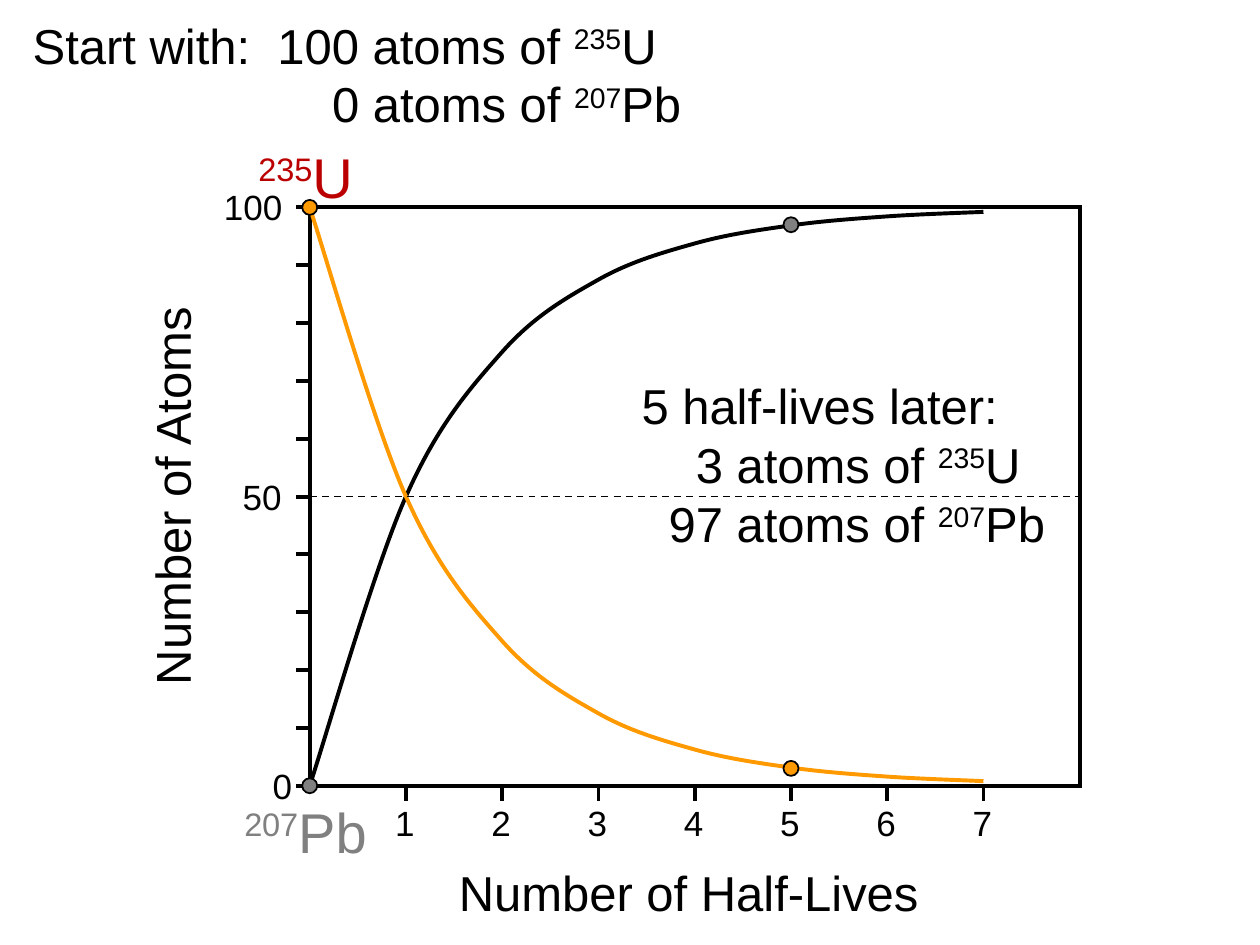
import pptx
import pptx.dml.color
import pptx.enum.dml
import pptx.enum.shapes
import pptx.enum.text
import pptx.oxml.ns
import pptx.util
from lxml import etree

Pt = pptx.util.Pt
ALIGN = pptx.enum.text.PP_ALIGN
SHAPE = pptx.enum.shapes.MSO_SHAPE
tag = pptx.oxml.ns.qn

COLORS = {
    "black": "000000",
    "uranium": "FF9900",
    "uranium_label": "BB0000",
    "lead": "808080",
}

# Plot area, in points
LEFT, TOP, WIDTH, HEIGHT = 177, 118.5, 440, 330.5
RIGHT, BOTTOM = LEFT + WIDTH, TOP + HEIGHT
HALF_LIFE = 55
HALF_LIVES = 7
TICK = 8


def rgb(name):
    return pptx.dml.color.RGBColor.from_string(COLORS[name])


def style_line(shape, color, width):
    shape.line.color.rgb = rgb(color)
    shape.line.width = Pt(width)


def atom_position(half_lives, atoms):
    return LEFT + half_lives * HALF_LIFE, BOTTOM - atoms * HEIGHT / 100


def fill_text(shape, lines, size, color="black", align=ALIGN.LEFT):
    """Write lines; each is a list of runs, and a run that starts with ^ is raised."""
    frame = shape.text_frame
    frame.word_wrap = False
    frame.auto_size = pptx.enum.text.MSO_AUTO_SIZE.NONE
    frame.vertical_anchor = pptx.enum.text.MSO_ANCHOR.TOP
    for index, runs in enumerate(lines):
        paragraph = frame.paragraphs[0] if index == 0 else frame.add_paragraph()
        paragraph.alignment = align
        paragraph.font.name = "Arial"
        paragraph.font.size = Pt(size)
        paragraph.font.color.rgb = rgb(color)
        for text in runs:
            run = paragraph.add_run()
            run.text = text.lstrip("^")
            if text.startswith("^"):
                run.font._element.set("baseline", "30000")
    return frame.paragraphs


def add_text(slide, box, lines, size, color="black", align=ALIGN.LEFT, rotation=0):
    shape = slide.shapes.add_textbox(*map(Pt, box))
    shape.rotation = rotation
    return fill_text(shape, lines, size, color, align)


def indent(paragraph, points):
    paragraph._p.get_or_add_pPr().set("marL", str(Pt(points)))


def add_line(slide, plot, start, end, width=2.25):
    line = slide.shapes.add_connector(
        pptx.enum.shapes.MSO_CONNECTOR.STRAIGHT, *map(Pt, (*start, *end)))
    style_line(line, "black", width)
    etree.SubElement(line._element.spPr, tag("a:effectLst"))
    # Join ends that meet the middle of a side of the plot
    middles = [(LEFT + WIDTH / 2, TOP), (LEFT, TOP + HEIGHT / 2),
               (LEFT + WIDTH / 2, BOTTOM), (RIGHT, TOP + HEIGHT / 2)]
    if start in middles:
        line.begin_connect(plot, middles.index(start))
    if end in middles:
        line.end_connect(plot, middles.index(end))
    return line


def bend(curve, knots):
    """Turn the straight segments into smooth ones, with handles along the chords."""
    left, top = knots[0][0], min(y for _, y in knots)
    padded = [knots[0], *knots, knots[-1]]
    segments = curve._element.findall(".//" + tag("a:lnTo"))
    for segment, a, b, c, d in zip(segments, padded, padded[1:], padded[2:], padded[3:]):
        first = [q + (r - p) / 6 for p, q, r in zip(a, b, c)]
        second = [r - (s - q) / 6 for q, r, s in zip(b, c, d)]
        cubic = etree.Element(tag("a:cubicBezTo"))
        for x, y in (first, second, c):
            etree.SubElement(cubic, tag("a:pt"),
                             x=str(Pt(x - left)), y=str(Pt(y - top)))
        segment.getparent().replace(segment, cubic)


def add_curve(slide, atoms, color):
    knots = [atom_position(n, atoms(n)) for n in range(HALF_LIVES + 1)]
    points = [(Pt(x), Pt(y)) for x, y in knots]
    builder = slide.shapes.build_freeform(*points[0])
    builder.add_line_segments(points[1:], close=False)
    curve = builder.convert_to_shape()
    bend(curve, knots)
    curve.fill.background()
    curve.shadow.inherit = False
    style_line(curve, color, 2.25)


def add_marker(slide, half_lives, atoms, color, diameter=8.6):
    x, y = atom_position(half_lives, atoms)
    marker = slide.shapes.add_shape(
        SHAPE.OVAL, Pt(x - diameter / 2), Pt(y - diameter / 2),
        Pt(diameter), Pt(diameter))
    marker.fill.solid()
    marker.fill.fore_color.rgb = rgb(color)
    marker.shadow.inherit = False
    style_line(marker, "black", 1)


def add_plot(slide):
    plot = slide.shapes.add_shape(
        SHAPE.RECTANGLE, Pt(LEFT), Pt(TOP), Pt(WIDTH), Pt(HEIGHT))
    plot.fill.background()
    plot.shadow.inherit = False
    style_line(plot, "black", 2.25)
    # Square corners
    outline = plot._element.spPr.find(tag("a:ln"))
    etree.SubElement(outline, tag("a:miter"), lim="800000")
    return plot


def add_axes(slide, plot):
    for n in range(1, HALF_LIVES + 1):
        x, y = atom_position(n, 0)
        add_line(slide, plot, (x, y), (x, y + TICK + 1))
        add_text(slide, (x - 14, 454.5, 26, 31), [[str(n)]], 20, align=ALIGN.RIGHT)
    for atoms in range(0, 101, 10):
        x, y = atom_position(0, atoms)
        add_line(slide, plot, (x, y), (x - TICK, y))
    for atoms, right, width in ((100, 168.5, 47.5), (50, 168, 37), (0, 174, 26)):
        y = atom_position(0, atoms)[1]
        add_text(slide, (right - width, y - 15.75, width, 31), [[str(atoms)]], 20,
                 align=ALIGN.RIGHT)
    middle = TOP + HEIGHT / 2
    half = add_line(slide, plot, (LEFT, middle), (RIGHT, middle), 1)
    half.line.dash_style = pptx.enum.dml.MSO_LINE.DASH
    add_text(slide, (252, 489.5, 283, 41), [["Number of Half-Lives"]], 28,
             align=ALIGN.CENTER)
    add_text(slide, (-21, 263, 238, 41), [["Number of Atoms"]], 28,
             align=ALIGN.CENTER, rotation=270)


def main():
    presentation = pptx.Presentation()
    presentation.slide_width, presentation.slide_height = Pt(720), Pt(540)
    slide = presentation.slides.add_slide(presentation.slide_layouts[5])

    # Starting amounts
    title = slide.shapes.title
    title.left, title.top, title.width, title.height = map(Pt, (11.5, 5, 396, 75))
    start_lines = fill_text(title, [
        ["Start with:  100 atoms of ", "^235", "U"],
        ["0 atoms of ", "^207", "Pb"]], 28)
    indent(start_lines[1], 171)

    # Decay and growth curves with their axes
    plot = add_plot(slide)
    add_curve(slide, lambda n: 100 - 100 * 0.5 ** n, "black")
    add_curve(slide, lambda n: 100 * 0.5 ** n, "uranium")
    add_axes(slide, plot)

    # Curve names
    add_text(slide, (140.5, 78, 74, 46), [["^235", "U"]], 32, "uranium_label")
    add_text(slide, (132.5, 452, 90, 46), [["^207", "Pb"]], 32, "lead")

    # Amounts at the start and after five half-lives
    for half_lives, uranium in ((0, 100), (5, 3)):
        add_marker(slide, half_lives, uranium, "uranium")
        add_marker(slide, half_lives, 100 - uranium, "lead")
    later_lines = add_text(slide, (359.5, 211, 254, 109), [
        ["5 half-lives later:"],
        ["3 atoms of ", "^235", "U"],
        ["97 atoms of ", "^207", "Pb"]], 28)
    indent(later_lines[1], 31)
    indent(later_lines[2], 15.5)

    presentation.save("out.pptx")


if __name__ == "__main__":
    main()
